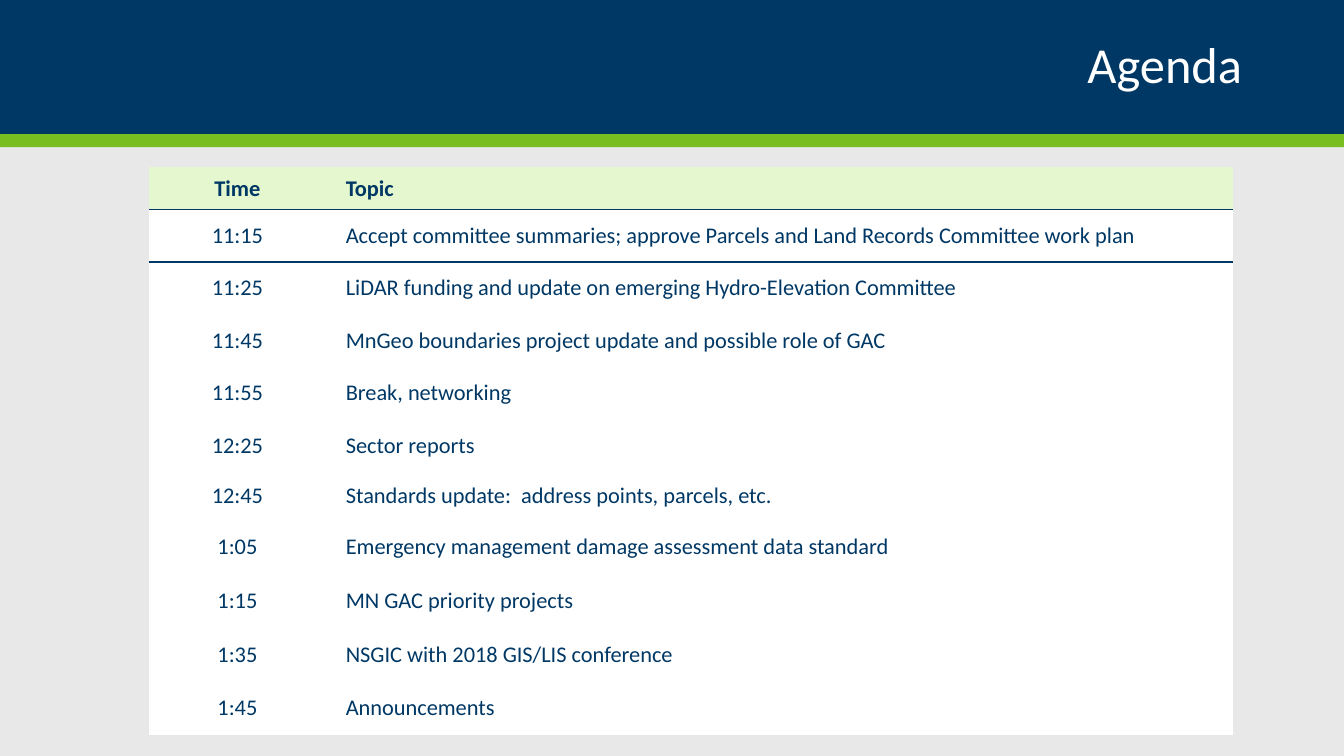
import pptx
import pptx.util
import pptx.dml.color
import pptx.enum.shapes
import pptx.enum.text
import pptx.oxml
import pptx.oxml.ns

Inches = pptx.util.Inches
Pt = pptx.util.Pt
ALIGN = pptx.enum.text.PP_ALIGN
MIDDLE = pptx.enum.text.MSO_ANCHOR.MIDDLE

COLOURS = {
    "navy": "003865",
    "green": "78BE21",
    "pale_green": "E4F7CE",
    "white": "FFFFFF",
    "grey": "E8E8E8",
}
NO_STYLE = "{2D5ABB26-0587-4C30-8999-92F81FD0307C}"

AGENDA = [
    (["Time"], ["Topic"]),
    (["11:15"], ["Accept committee summaries; approve Parcels and Land Records Committee work plan"]),
    (["11:25"], ["LiDAR funding and update on emerging Hydro-Elevation Committee"]),
    (["11:45"], ["MnGeo boundaries project update and possible role of GAC"]),
    (["11:55"], ["Break, networking"]),
    (["12:25"], ["Sector reports"]),
    (["12:45"], ["Standards update:  address points, parcels, etc."]),
    (["1:05"], ["Emergency management damage assessment data standard"]),
    (["1:15", "1:35"], ["MN GAC priority projects", "NSGIC with 2018 GIS/LIS conference"]),
    (["1:45"], ["Announcements"]),
]
ROW_HEIGHTS = [0.42] + [0.52] * 5 + [0.49, 0.52, 1.08, 0.52]
COLUMN_WIDTHS = [1.75, 9]


class AgendaSlide:
    font = "Calibri"

    def __init__(self, presentation):
        self.slide = presentation.slides.add_slide(presentation.slide_layouts[5])
        self.paint(self.slide.background.fill, "grey")

    def colour(self, name):
        return pptx.dml.color.RGBColor.from_string(COLOURS[name])

    def paint(self, fill, name):
        fill.solid()
        fill.fore_color.rgb = self.colour(name)

    def style(self, paragraph, size, colour, align, bold=False):
        paragraph.alignment = align
        paragraph.font.name = self.font
        paragraph.font.size = Pt(size)
        paragraph.font.bold = bold
        paragraph.font.color.rgb = self.colour(colour)

    def band(self, top, height, colour):
        band = self.slide.shapes.add_shape(
            pptx.enum.shapes.MSO_SHAPE.RECTANGLE,
            Inches(0), Inches(top), Inches(13.33), Inches(height))
        band.shadow.inherit = False
        self.paint(band.fill, colour)
        band.line.fill.background()
        self.slide.shapes._spTree.insert(2, band._element)

    def title(self, text):
        title = self.slide.shapes.title
        title.left, title.top = Inches(0.92), Inches(0.17)
        title.width, title.height = Inches(11.5), Inches(1)
        title.text_frame.text = text
        title.text_frame.vertical_anchor = MIDDLE
        heading = title.text_frame.paragraphs[0]
        heading.line_spacing = 0.9
        self.style(heading, 36, "white", ALIGN.RIGHT)

    def rule(self, cell, side):
        border = pptx.oxml.parse_xml(
            f'<a:{side} {pptx.oxml.ns.nsdecls("a")} w="12700"><a:solidFill>'
            f'<a:srgbClr val="{COLOURS["navy"]}"/></a:solidFill></a:{side}>')
        cell._tc.get_or_add_tcPr().insert(0, border)

    def cell(self, cell, lines, is_header, is_time):
        cell.text = "\n".join(lines)
        cell.vertical_anchor = MIDDLE
        cell.margin_left = Inches(0.1 if is_time else 0.2)
        cell.margin_right = Inches(0.1)
        cell.margin_top = cell.margin_bottom = Inches(0.05 if is_header else 0.1)
        self.paint(cell.fill, "pale_green" if is_header else "white")
        for index, paragraph in enumerate(cell.text_frame.paragraphs):
            self.style(paragraph, 16, "navy", ALIGN.CENTER if is_time else ALIGN.LEFT, is_header)
            if index:
                paragraph.space_before = Pt(19.5)

    def table(self, rows, left, top):
        table = self.slide.shapes.add_table(
            len(rows), len(COLUMN_WIDTHS), Inches(left), Inches(top),
            Inches(sum(COLUMN_WIDTHS)), Inches(sum(ROW_HEIGHTS))).table
        table.horz_banding = False
        table._tbl.tblPr.find(pptx.oxml.ns.qn("a:tableStyleId")).text = NO_STYLE
        for column, width in zip(table.columns, COLUMN_WIDTHS):
            column.width = Inches(width)
        for r, entry in enumerate(rows):
            table.rows[r].height = Inches(ROW_HEIGHTS[r])
            for c, lines in enumerate(entry):
                self.cell(table.cell(r, c), lines, r == 0, c == 0)
        for c in range(len(COLUMN_WIDTHS)):
            self.rule(table.cell(0, c), "lnB")
            self.rule(table.cell(1, c), "lnT")


def main():
    presentation = pptx.Presentation()
    presentation.slide_width = Inches(13.33)
    presentation.slide_height = Inches(7.5)
    agenda = AgendaSlide(presentation)
    agenda.band(0, 1.33, "navy")
    agenda.band(1.33, 0.13, "green")
    agenda.title("Agenda")
    agenda.table(AGENDA, 1.48, 1.66)
    presentation.save("out.pptx")


if __name__ == "__main__":
    main()
